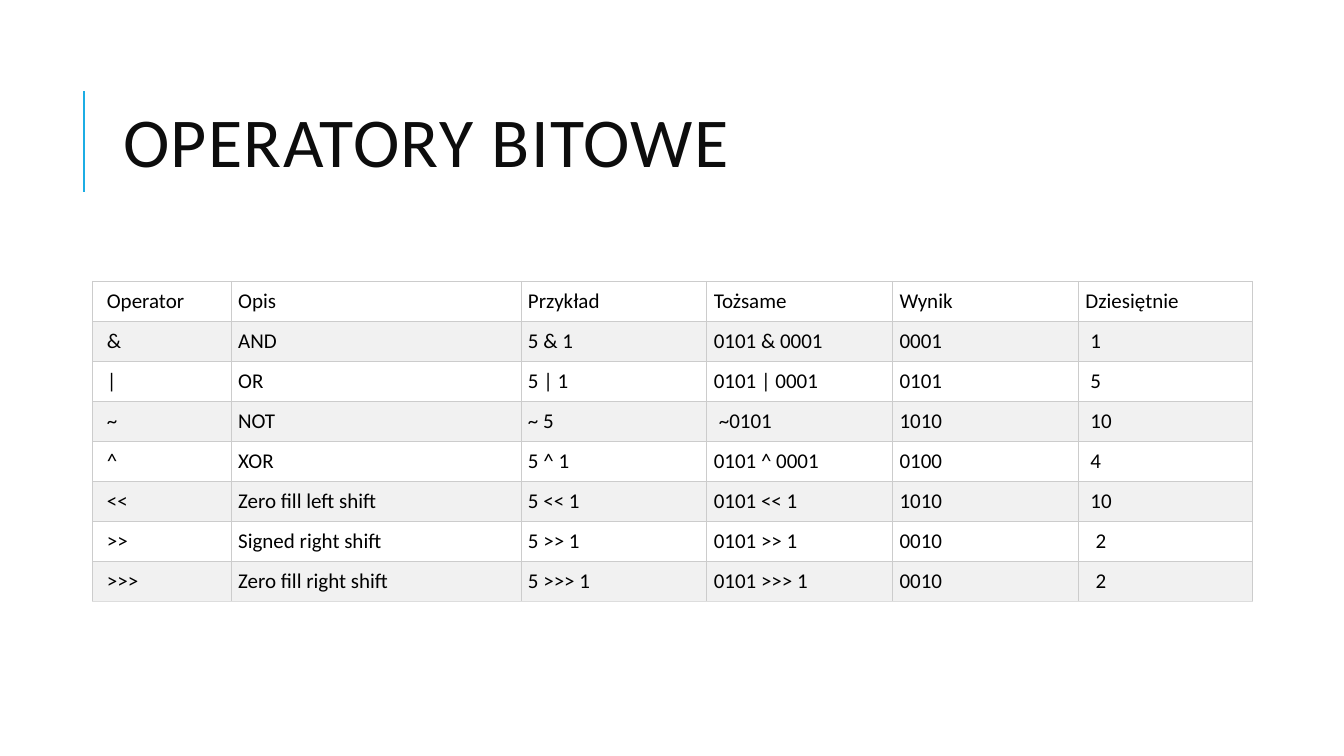
from lxml.etree import SubElement
from pptx import Presentation
from pptx.dml.color import RGBColor
from pptx.enum.shapes import MSO_CONNECTOR
from pptx.enum.text import MSO_ANCHOR, MSO_AUTO_SIZE, PP_ALIGN
from pptx.oxml.ns import qn
from pptx.util import Inches, Pt

ACCENT = RGBColor(0x1C, 0xAD, 0xE4)
TITLE_INK = RGBColor(0x0D, 0x0D, 0x0D)
BLACK = RGBColor(0x00, 0x00, 0x00)
WHITE = RGBColor(0xFF, 0xFF, 0xFF)
BAND = RGBColor(0xF1, 0xF1, 0xF1)
GRID = RGBColor(0xCC, 0xCC, 0xCC)
GRID_END = RGBColor(0xDD, 0xDD, 0xDD)

COLUMN_WIDTHS = [1.37, 2.87, 1.84, 1.84, 1.84, 1.72]
OPERATORS = [
    ["Operator", "Opis", "Przykład", "Tożsame", "Wynik", "Dziesiętnie"],
    ["&", "AND", "5 & 1", "0101 & 0001", "0001", "1"],
    ["|", "OR", "5 | 1", "0101 | 0001", "0101", "5"],
    ["~", "NOT", "~ 5", "~0101", "1010", "10"],
    ["^", "XOR", "5 ^ 1", "0101 ^ 0001", "0100", "4"],
    ["<<", "Zero fill left shift", "5 << 1", "0101 << 1", "1010", "10"],
    [">>", "Signed right shift", "5 >> 1", "0101 >> 1", "0010", "2"],
    [">>>", "Zero fill right shift", "5 >>> 1", "0101 >>> 1", "0010", "2"],
]
PADDING = 0.07
FIRST_PADDING = 0.14
SPACE = 0.05
LEADING_SPACES = {(3, 3): 1, (1, 5): 1, (2, 5): 1, (3, 5): 1, (4, 5): 1,
                  (5, 5): 1, (6, 5): 2, (7, 5): 2}


def write_text(frame, text, size, color, line_spacing=None, tracking=None):
    """Write one left-aligned Calibri paragraph into a text frame."""
    para = frame.paragraphs[0]
    para.alignment = PP_ALIGN.LEFT
    if line_spacing:
        para.line_spacing = line_spacing
    span = para.add_run()
    span.text = text
    span.font.name = "Calibri"
    span.font.size = Pt(size)
    span.font.color.rgb = color
    if tracking:
        span.font._element.set("spc", str(int(tracking * 100)))


def add_title(page, left, top, width, height):
    """Place the title and the accent rule to its left."""
    title = page.shapes.title
    title.left, title.top = Inches(left), Inches(top)
    title.width, title.height = Inches(width), Inches(height)
    frame = title.text_frame
    frame.word_wrap = True
    frame.auto_size = MSO_AUTO_SIZE.NONE
    frame.vertical_anchor = MSO_ANCHOR.MIDDLE
    write_text(frame, "OPERATORY BITOWE", 50, TITLE_INK, line_spacing=0.8, tracking=1)

    rule_left, rule_top = Inches(left - 0.29), Inches(top + 0.26)
    rule = page.shapes.add_connector(MSO_CONNECTOR.STRAIGHT, rule_left, rule_top + Inches(1),
                                     rule_left, rule_top)
    rule.line.color.rgb = ACCENT
    rule.line.width = Pt(1.5)
    SubElement(rule._element.spPr, qn("a:effectLst"))


def set_borders(cell, bottom_color):
    """Draw thin borders on all four sides of a cell."""
    properties = cell._tc.get_or_add_tcPr()
    sides = {"a:lnL": GRID, "a:lnR": GRID, "a:lnT": GRID, "a:lnB": bottom_color}
    for side, color in sides.items():
        line = SubElement(properties, qn(side), w=str(Pt(0.75)))
        fill = SubElement(line, qn("a:solidFill"))
        SubElement(fill, qn("a:srgbClr"), val=str(color))


def add_operator_table(page, left, top, width, height):
    """Place the banded table of bitwise operators."""
    table = page.shapes.add_table(len(OPERATORS), len(COLUMN_WIDTHS), Inches(left),
                                  Inches(top), Inches(width), Inches(height)).table
    table.first_row = False
    table.horz_banding = False
    total = sum(COLUMN_WIDTHS)
    for column, share in zip(table.columns, COLUMN_WIDTHS):
        column.width = Inches(width * share / total)

    last_row = len(OPERATORS) - 1
    for row, texts in enumerate(OPERATORS):
        for col, text in enumerate(texts):
            cell = table.cell(row, col)
            set_borders(cell, GRID_END if row == last_row else GRID)
            cell.fill.solid()
            cell.fill.fore_color.rgb = BAND if row % 2 else WHITE
            padding = PADDING if col else FIRST_PADDING
            cell.margin_left = Inches(padding + SPACE * LEADING_SPACES.get((row, col), 0))
            cell.margin_top = cell.margin_right = cell.margin_bottom = Inches(PADDING)
            write_text(cell.text_frame, text, 15, BLACK)


def main():
    """Build and save the slide."""
    deck = Presentation()
    deck.slide_width, deck.slide_height = Inches(13.33), Inches(7.5)
    page = deck.slides.add_slide(deck.slide_layouts[5])
    page.background.fill.solid()
    page.background.fill.fore_color.rgb = WHITE
    add_title(page, 1.12, 0.64, 10.63, 1.64)
    add_operator_table(page, 0.92, 2.79, 11.5, 3.18)
    deck.save("out.pptx")


if __name__ == "__main__":
    main()
